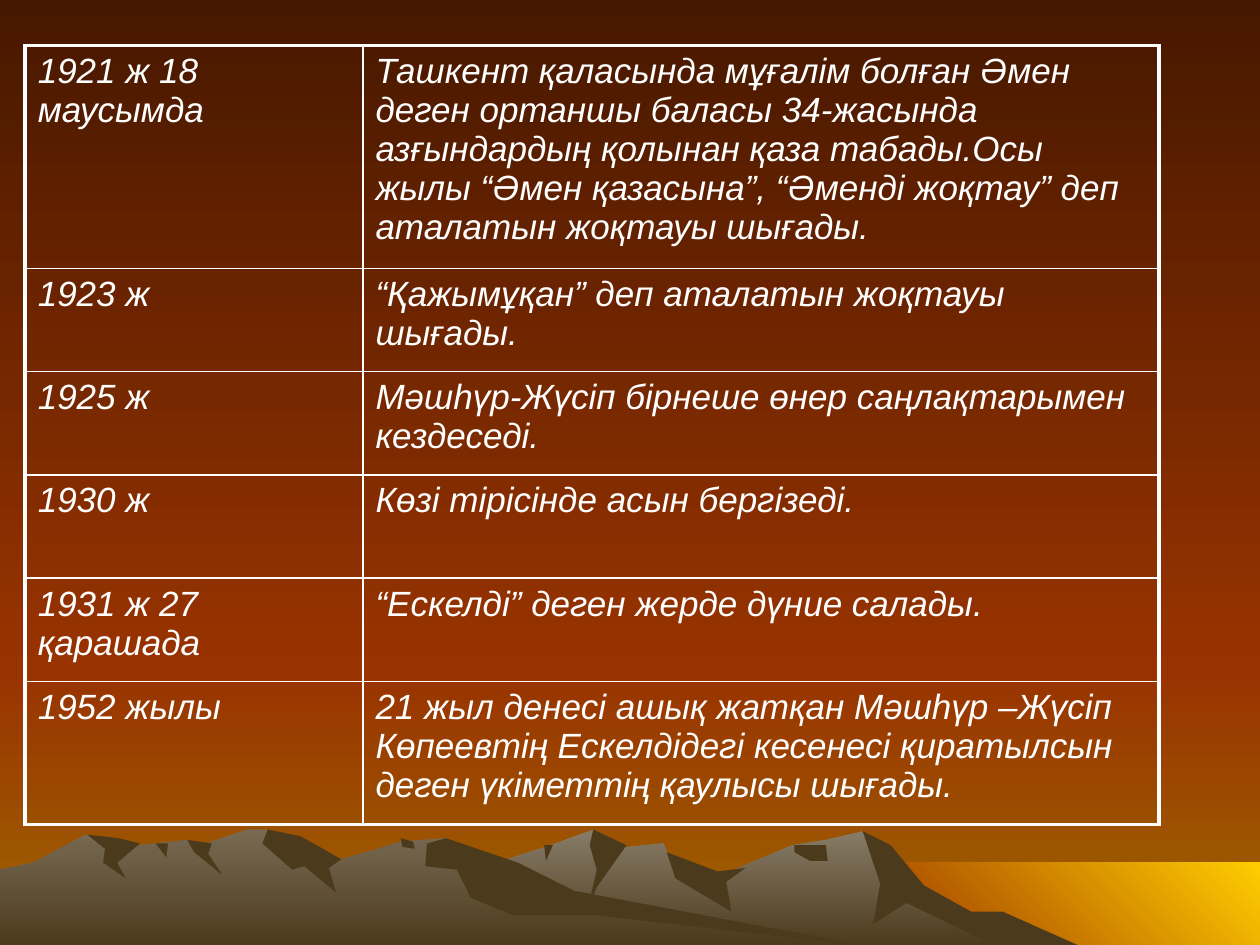
from dataclasses import dataclass
from typing import Optional

from lxml.etree import SubElement
from pptx import Presentation
from pptx.dml.color import RGBColor as Rgb
from pptx.enum.shapes import MSO_SHAPE as Preset
from pptx.oxml.ns import qn
from pptx.util import Pt


@dataclass(frozen=True)
class Theme:
    font: str = "Arial"
    text_size: float = 20
    white: str = "FFFFFF"
    night: str = "471800"
    rust: str = "993300"
    amber: str = "9E6600"
    sun: str = "FFCC00"
    shade: str = "4C3A1C"
    far_rock: str = "887C68"
    near_rock: str = "786A53"
    outer_line: float = 2.25
    inner_line: float = 1


@dataclass(frozen=True)
class Band:
    left: float
    top: float
    width: float
    height: float
    start: str
    end: str
    angle: float = 270


@dataclass(frozen=True)
class Ridge:
    points: tuple[tuple[int, int], ...]
    top_color: Optional[str] = None  # None gives a flat shadow


@dataclass(frozen=True)
class Event:
    date: str
    story: str
    lines: int


THEME = Theme()
WIDTH, HEIGHT, HORIZON = 720, 540, 384
COLUMNS = (193, 455)
LINE_HEIGHT, ROW_PADDING = 22.8, 13.4

BANDS = (
    Band(0, HORIZON, WIDTH, HEIGHT - HORIZON, THEME.rust, THEME.amber),
    Band(0, 0, WIDTH, HORIZON, THEME.night, THEME.rust),
    Band(492, 493, 228, 48, THEME.rust, THEME.sun, 45),
)

# Outlines in points
RIDGES = (
    # Far range and its shadows
    Ridge(((186, 541), (235, 511), (284, 493), (315, 483), (339, 474), (350, 485),
           (379, 482), (386, 497), (408, 502), (453, 483), (472, 480), (493, 475),
           (521, 503), (591, 541)), THEME.far_rock),
    Ridge(((493, 475), (509, 483), (528, 506), (555, 521), (573, 521), (618, 541),
           (570, 541), (518, 516), (499, 528), (503, 505))),
    Ridge(((339, 474), (358, 483), (341, 507), (335, 523), (341, 497), (337, 483))),
    Ridge(((381, 487), (410, 498), (426, 496), (415, 504), (418, 521), (386, 502))),
    Ridge(((454, 483), (472, 483), (473, 492), (463, 492), (454, 487))),
    Ridge(((311, 483), (316, 483), (312, 492))),
    # Near range and its shadows
    Ridge(((0, 541), (0, 497), (19, 493), (49, 477), (80, 483), (107, 480), (115, 483),
           (141, 474), (153, 474), (170, 490), (195, 491), (213, 486), (229, 481),
           (255, 479), (311, 513), (497, 541)), THEME.near_rock),
    Ridge(((153, 474), (172, 478), (195, 491), (188, 496), (192, 510), (174, 495),
           (167, 497), (150, 482))),
    Ridge(((244, 482), (255, 479), (296, 493), (328, 509), (497, 541), (340, 523),
           (293, 523), (269, 513), (261, 497), (243, 495))),
    Ridge(((229, 479), (236, 481), (237, 485), (230, 484))),
    Ridge(((107, 480), (121, 482), (119, 488), (127, 500), (111, 487))),
    Ridge(((89, 482), (96, 482), (95, 490))),
    Ridge(((50, 477), (68, 479), (80, 482), (67, 493), (72, 502), (59, 493), (60, 485))),
)

EVENTS = (
    Event("1921 ж 18 маусымда",
          "Ташкент қаласында мұғалім болған Әмен деген ортаншы баласы 34-жасында "
          "азғындардың қолынан қаза табады.Осы жылы “Әмен қазасына”, “Әменді жоқтау” "
          "деп аталатын жоқтауы шығады.", 5),
    Event("1923 ж", "“Қажымұқан” деп аталатын жоқтауы шығады.", 2),
    Event("1925 ж", "Мәшһүр-Жүсіп бірнеше өнер саңлақтарымен кездеседі.", 2),
    Event("1930 ж", "Көзі тірісінде асын бергізеді.", 2),
    Event("1931 ж 27 қарашада", "“Ескелді” деген жерде дүние салады.", 2),
    Event("1952 жылы",
          "21 жыл денесі ашық жатқан Мәшһүр –Жүсіп Көпеевтің Ескелдідегі кесенесі "
          "қиратылсын деген үкіметтің қаулысы шығады.", 3),
)


def shade_fill(fill, start: str, end: str, angle: float = 270) -> None:
    fill.gradient()
    fill.gradient_angle = angle
    for stop, color in zip(fill.gradient_stops, (start, end)):
        stop.color.rgb = Rgb.from_string(color)


def draw_band(page, band: Band) -> None:
    box = page.shapes.add_shape(Preset.RECTANGLE, Pt(band.left), Pt(band.top),
                                Pt(band.width), Pt(band.height))
    box.shadow.inherit = False
    box.line.fill.background()
    shade_fill(box.fill, band.start, band.end, band.angle)


def draw_ridge(page, ridge: Ridge) -> None:
    builder = page.shapes.build_freeform(*ridge.points[0], scale=Pt(1))
    builder.add_line_segments(ridge.points[1:], close=True)
    rock = builder.convert_to_shape()
    rock.shadow.inherit = False
    rock.line.fill.background()
    if ridge.top_color:
        shade_fill(rock.fill, ridge.top_color, THEME.shade)
    else:
        rock.fill.solid()
        rock.fill.fore_color.rgb = Rgb.from_string(THEME.shade)


def draw_borders(cell, outer: dict[str, bool]) -> None:
    properties = cell._tc.get_or_add_tcPr()
    for side, is_outer in outer.items():
        width = THEME.outer_line if is_outer else THEME.inner_line
        line = SubElement(properties, qn(f"a:ln{side}"), w=str(Pt(width)))
        SubElement(SubElement(line, qn("a:solidFill")), qn("a:srgbClr"), val=THEME.white)


def write_cell(cell, text: str) -> None:
    cell.fill.background()
    span = cell.text_frame.paragraphs[0].add_run()
    span.text = text
    span.font.name = THEME.font
    span.font.size = Pt(THEME.text_size)
    span.font.italic = True
    span.font.color.rgb = Rgb.from_string(THEME.white)


def draw_timeline(page, events: tuple[Event, ...]) -> None:
    heights = [event.lines * LINE_HEIGHT + ROW_PADDING for event in events]
    table = page.shapes.add_table(len(events), len(COLUMNS), Pt(14.4), Pt(26),
                                  Pt(sum(COLUMNS)), Pt(sum(heights))).table
    table.first_row = table.horz_banding = False
    for column, width in zip(table.columns, COLUMNS):
        column.width = Pt(width)
    for row, event in enumerate(events):
        table.rows[row].height = Pt(heights[row])
        for col, text in enumerate((event.date, event.story)):
            cell = table.cell(row, col)
            draw_borders(cell, {"L": col == 0, "R": col == len(COLUMNS) - 1,
                                "T": row == 0, "B": row == len(events) - 1})
            write_cell(cell, text)


def main() -> None:
    deck = Presentation()
    deck.slide_width, deck.slide_height = Pt(WIDTH), Pt(HEIGHT)
    page = deck.slides.add_slide(deck.slide_layouts[6])
    shade_fill(page.background.fill, THEME.night, THEME.rust)
    # Sky and mountains
    for band in BANDS:
        draw_band(page, band)
    for ridge in RIDGES:
        draw_ridge(page, ridge)
    # Table of events
    draw_timeline(page, EVENTS)
    deck.save("out.pptx")


if __name__ == "__main__":
    main()
